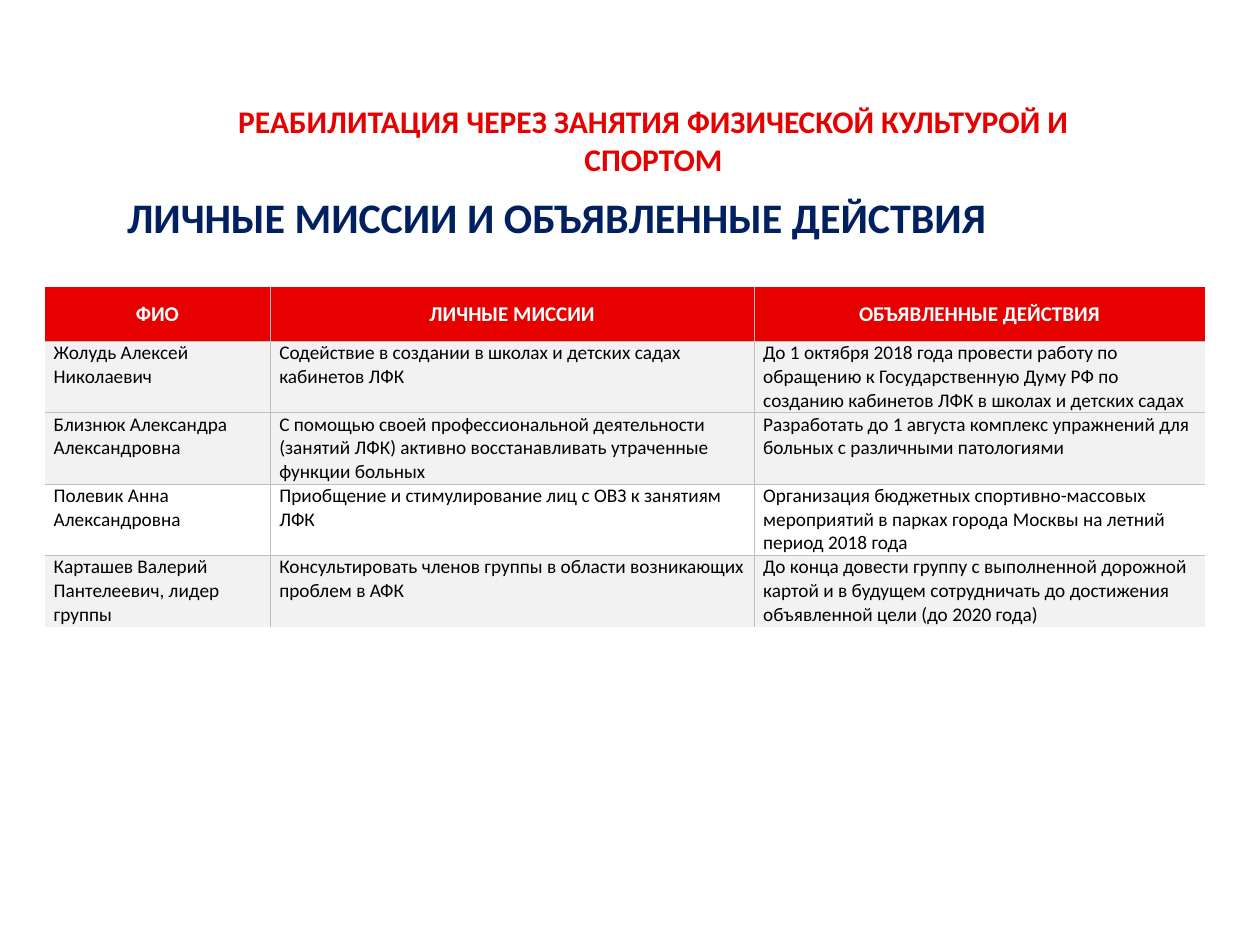
"""Build the slide of personal missions and declared actions."""
import pptx
import pptx.dml.color
import pptx.enum.text
import pptx.oxml
import pptx.oxml.ns
import pptx.util

Pt = pptx.util.Pt
ALIGN = pptx.enum.text.PP_ALIGN
ANCHOR = pptx.enum.text.MSO_ANCHOR
COLORS = {"red": "E60000", "navy": "002060", "band": "F2F2F2",
          "grid": "BFBFBF", "white": "FFFFFF", "black": "000000"}


def style_text(frame, text, size, color, bold, align):
    frame.text = text
    paragraph = frame.paragraphs[0]
    paragraph.alignment = align
    font = paragraph.runs[0].font
    font.name = "Calibri"
    font.size = Pt(size)
    font.bold = bold
    font.color.rgb = pptx.dml.color.RGBColor.from_string(COLORS[color])


def add_border(cell, side, visible):
    paint = f'<a:solidFill><a:srgbClr val="{COLORS["grid"]}"/></a:solidFill>' if visible else "<a:noFill/>"
    cell._tc.get_or_add_tcPr().append(pptx.oxml.parse_xml(
        f'<a:ln{side} {pptx.oxml.ns.nsdecls("a")} w="{Pt(0.5)}">{paint}</a:ln{side}>'))


deck = pptx.Presentation()
deck.slide_width, deck.slide_height = Pt(720), Pt(540)
slide = deck.slides.add_slide(deck.slide_layouts[6])

rows = [
    ("ФИО", "ЛИЧНЫЕ МИССИИ", "ОБЪЯВЛЕННЫЕ ДЕЙСТВИЯ"),
    ("Жолудь Алексей Николаевич",
     "Содействие в создании в школах и детских садах кабинетов ЛФК",
     "До 1 октября 2018 года провести работу по обращению к Государственную Думу РФ "
     "по созданию кабинетов ЛФК в школах и детских садах"),
    ("Близнюк Александра Александровна",
     "С помощью своей профессиональной деятельности (занятий ЛФК) активно "
     "восстанавливать утраченные функции больных",
     "Разработать до 1 августа комплекс упражнений для больных с различными патологиями"),
    ("Полевик Анна Александровна",
     "Приобщение и стимулирование лиц с ОВЗ к занятиям ЛФК",
     "Организация бюджетных спортивно-массовых мероприятий в парках города Москвы "
     "на летний период 2018 года"),
    ("Карташев Валерий Пантелеевич, лидер группы",
     "Консультировать членов группы в области возникающих проблем в АФК",
     "До конца довести группу с выполненной дорожной картой и в будущем сотрудничать "
     "до достижения объявленной цели (до 2020 года)"),
]
row_fills = ["red", "band", "band", None, "band"]
column_widths = [128.9, 276.5, 257.7]
row_heights = [31] + [40] * 4

missions = slide.shapes.add_table(len(rows), len(column_widths), Pt(25.5), Pt(164),
                                  Pt(sum(column_widths)), Pt(sum(row_heights))).table
for column, width in zip(missions.columns, column_widths):
    column.width = Pt(width)

for r, (texts, fill, height) in enumerate(zip(rows, row_fills, row_heights)):
    missions.rows[r].height = Pt(height)
    header = r == 0
    for c, text in enumerate(texts):
        cell = missions.cell(r, c)
        cell.margin_left = cell.margin_right = Pt(5.2)
        cell.margin_top = cell.margin_bottom = Pt(2.6 if header else 0)
        cell.vertical_anchor = ANCHOR.MIDDLE if header else ANCHOR.TOP
        inner_sides = {"L": c > 0, "R": c < len(texts) - 1,
                       "T": r > 0, "B": r < len(rows) - 1}
        for side, visible in inner_sides.items():
            add_border(cell, side, visible)
        if fill:
            cell.fill.solid()
            cell.fill.fore_color.rgb = pptx.dml.color.RGBColor.from_string(COLORS[fill])
        else:
            cell.fill.background()
        style_text(cell.text_frame, text, 12 if header else 11,
                   "white" if header else "black", header,
                   ALIGN.CENTER if header else ALIGN.LEFT)

heading = slide.shapes.add_textbox(Pt(65.5), Pt(106), Pt(510.5), Pt(36)).text_frame
heading.word_wrap = False
heading.auto_size = pptx.enum.text.MSO_AUTO_SIZE.SHAPE_TO_FIT_TEXT
style_text(heading, "ЛИЧНЫЕ МИССИИ И ОБЪЯВЛЕННЫЕ ДЕЙСТВИЯ", 24, "navy", True, ALIGN.LEFT)

topic = slide.shapes.add_textbox(Pt(116), Pt(66.2), Pt(514.8), Pt(28)).text_frame
topic.word_wrap = True
topic.vertical_anchor = ANCHOR.MIDDLE
style_text(topic, "РЕАБИЛИТАЦИЯ ЧЕРЕЗ ЗАНЯТИЯ ФИЗИЧЕСКОЙ КУЛЬТУРОЙ И СПОРТОМ",
           18, "red", True, ALIGN.CENTER)

deck.save("out.pptx")
